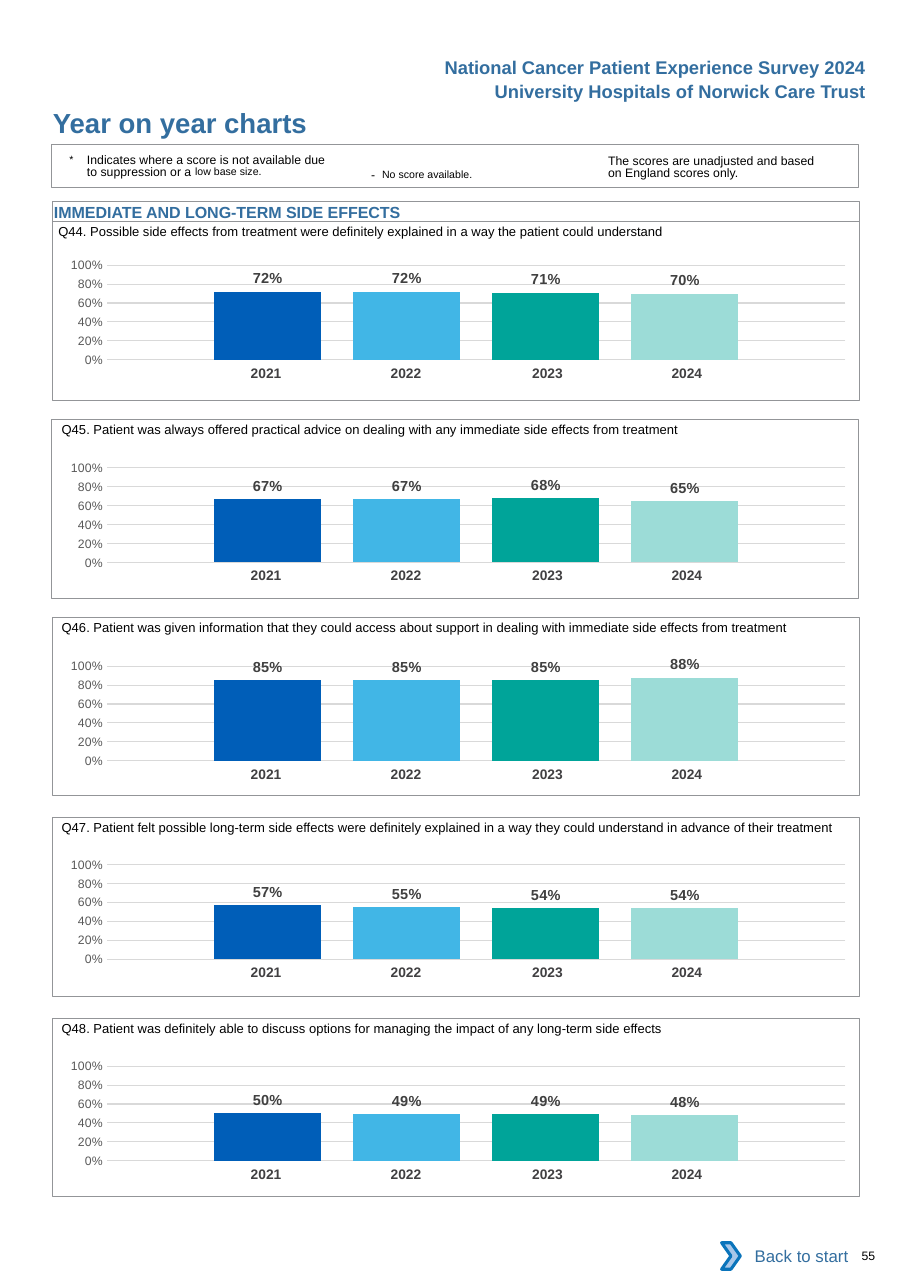
from dataclasses import dataclass

from lxml import etree
from pptx import Presentation
from pptx import util as u
from pptx.chart.data import CategoryChartData
from pptx.dml.color import RGBColor
from pptx.enum import chart as ch
from pptx.enum import shapes, text

CELL = 0.1  # inches per grid row and column
COLOURS = {
    "heading": "336E9F", "body": "000000", "frame": "939598", "year": "414042",
    "axis": "595959", "grid": "D9D9D9", "label": "404040", "white": "FFFFFF",
    "arrow": "A8C7E9", "arrow_edge": "0A74BB",
}
YEARS = {"2021": "005EB8", "2022": "41B6E6", "2023": "00A499", "2024": "9CDCD7"}
YEAR_COLUMNS = [12.7, 12.7, 13.4, 12.7]
YEAR_RIGHT_INSETS = [0, 0, 0.4, 1.2]
PLOT_LAYOUT = {"x": 0.08, "y": 0.145, "w": 0.915, "h": 0.666}

# Panel left, panel top, chart top, question left, question, scores
PANELS = [
    (4.8, 20.1, 22.2, 5.3, "Q44. Possible side effects from treatment were definitely explained "
     "in a way the patient could understand", (0.72, 0.72, 0.71, 0.70)),
    (4.7, 38.1, 40.6, 5.6, "Q45. Patient was always offered practical advice on dealing with "
     "any immediate side effects from treatment", (0.67, 0.67, 0.68, 0.65)),
    (4.8, 56.0, 58.6, 5.6, "Q46. Patient was given information that they could access about "
     "support in dealing with immediate side effects from treatment", (0.85, 0.85, 0.85, 0.88)),
    (4.8, 74.2, 76.6, 5.6, "Q47. Patient felt possible long-term side effects were definitely "
     "explained in a way they could understand in advance of their treatment",
     (0.57, 0.55, 0.54, 0.54)),
    (4.8, 92.4, 94.9, 5.6, "Q48. Patient was definitely able to discuss options for managing "
     "the impact of any long-term side effects", (0.50, 0.49, 0.49, 0.48)),
]


@dataclass
class Box:
    """A region measured in grid cells."""
    left: float
    top: float
    width: float
    height: float

    def inner(self, column, row, width, height):
        return Box(self.left + column, self.top + row, width, height)

    def lengths(self):
        return [cells(n) for n in (self.left, self.top, self.width, self.height)]


def cells(count):
    return u.Inches(count * CELL)


def colour(name):
    return RGBColor.from_string(COLOURS.get(name, name))


def set_font(font, size, name, bold=False):
    font.name, font.size, font.bold = "Arial", u.Pt(size), bold
    font.color.rgb = colour(name)


def set_insets(holder, left=0, top=0, right=0, bottom=0):
    holder.margin_left, holder.margin_top = cells(left), cells(top)
    holder.margin_right, holder.margin_bottom = cells(right), cells(bottom)


def write(shape, content, size, name="body", bold=False, align=text.PP_ALIGN.LEFT,
          anchor=text.MSO_ANCHOR.TOP, wrap=True, **insets):
    frame = shape.text_frame
    frame.word_wrap, frame.vertical_anchor = wrap, anchor
    set_insets(frame, **insets)
    paragraph = frame.paragraphs[0]
    paragraph.alignment = align
    if content:
        paragraph.add_run().text = content
    set_font(paragraph.font, size, name, bold)
    return paragraph


def add_text(slide, box, *args, **options):
    return write(slide.shapes.add_textbox(*box.lengths()), *args, **options)


def add_box(slide, box, line="frame", width=0.5, fill=None, kind=shapes.MSO_SHAPE.RECTANGLE):
    shape = slide.shapes.add_shape(kind, *box.lengths())
    shape.shadow.inherit = False
    if fill:
        shape.fill.solid()
        shape.fill.fore_color.rgb = colour(fill)
    else:
        shape.fill.background()
    if line:
        shape.line.color.rgb = colour(line)
        shape.line.width = u.Pt(width)
    else:
        shape.line.fill.background()
    return shape


def add_plain(paragraph, content, size=8):
    run = paragraph.add_run()
    run.text = content
    set_font(run.font, size, "body")
    return run


def add_raised(paragraph, content, baseline):
    """Add a 12 pt run raised by a percentage, which draws it small."""
    run = add_plain(paragraph, content, 12)
    run._r.get_or_add_rPr().set("baseline", str(baseline * 1000))


def add_header(slide, box):
    for row, line in enumerate(("National Cancer Patient Experience Survey 2024",
                                "University Hospitals of Norwick Care Trust")):
        add_text(slide, box.inner(0, row * 2.2, box.width, 3), line, 12, "heading", True,
                 text.PP_ALIGN.RIGHT, wrap=False, left=1, top=0.5, right=1, bottom=0.5)
    add_text(slide, box.inner(-34.4, 5, 45, 3), "Year on year charts", 18, "heading", True)


def add_key(slide, box):
    add_box(slide, box, width=0.75)
    suppressed = add_text(slide, box.inner(1.6, 0.7, 24, 2.8), "", 8, top=0.3)
    add_raised(suppressed, "*\t", 3)
    add_plain(suppressed, "Indicates where a score is not available due to suppression or a ")
    add_raised(suppressed, "low base size.", 7)
    suppressed.line_spacing = u.Pt(8.1)
    properties = suppressed._p.get_or_add_pPr()
    properties.set("marL", str(cells(1.6)))
    properties.set("indent", str(-cells(1.6)))

    missing = add_text(slide, box.inner(28, 1, 18.3, 2.4), "", 8,
                       left=1, top=0.5, right=1, bottom=0.5)
    add_plain(missing, "-  ")
    add_raised(missing, "No score available.", 3)

    basis = add_text(slide, box.inner(50.5, 0.7, 20.1, 2.7),
                     "The scores are unadjusted and based on England scores only.", 8, top=0.3)
    basis.line_spacing = u.Pt(8.1)


def add_years(slide, box):
    table = slide.shapes.add_table(1, len(YEARS), *box.lengths()).table
    table.first_row = table.horz_banding = False
    table.rows[0].height = cells(box.height)
    for column, (year, width) in enumerate(zip(YEARS, YEAR_COLUMNS)):
        table.columns[column].width = cells(width)
        cell = table.cell(0, column)
        cell.fill.background()
        set_insets(cell, 1, 0.5, YEAR_RIGHT_INSETS[column], 0.5)
        cell.text = year
        paragraph = cell.text_frame.paragraphs[0]
        paragraph.alignment = text.PP_ALIGN.CENTER
        set_font(paragraph.font, 9, "year", True)


def set_plot_layout(chart):
    area = chart._chartSpace.chart.plotArea
    namespace = etree.QName(area).namespace
    for old in area.findall(f"{{{namespace}}}layout"):
        area.remove(old)
    layout = etree.Element(f"{{{namespace}}}layout")
    manual = etree.SubElement(layout, f"{{{namespace}}}manualLayout")
    settings = {"layoutTarget": "inner", "xMode": "edge", "yMode": "edge", **PLOT_LAYOUT}
    for tag, value in settings.items():
        etree.SubElement(manual, f"{{{namespace}}}{tag}").set("val", str(value))
    area.insert(0, layout)


def add_score_chart(slide, box, scores):
    data = CategoryChartData(number_format="0%")
    data.categories = ["1"]
    for year, score in zip(YEARS, scores):
        data.add_series(year, [score])
    chart = slide.shapes.add_chart(ch.XL_CHART_TYPE.COLUMN_CLUSTERED, *box.lengths(), data).chart
    chart.has_legend = chart.has_title = False
    chart.font.name, chart.font.size = "Calibri", u.Pt(10)
    chart.category_axis.visible = False
    axis = chart.value_axis
    axis.minimum_scale, axis.maximum_scale, axis.major_unit = 0, 1, 0.2
    axis.major_tick_mark = axis.minor_tick_mark = ch.XL_TICK_MARK.NONE
    axis.format.line.fill.background()
    axis.major_gridlines.format.line.color.rgb = colour("grid")
    axis.major_gridlines.format.line.width = u.Pt(0.75)
    axis.tick_labels.number_format = "0%"
    axis.tick_labels.number_format_is_linked = False
    set_font(axis.tick_labels.font, 8, "axis")
    plot = chart.plots[0]
    plot.gap_width, plot.overlap, plot.vary_by_categories = 200, -30, False
    for series, fill in zip(plot.series, YEARS.values()):
        series.format.fill.solid()
        series.format.fill.fore_color.rgb = colour(fill)
        labels = series.data_labels
        labels.show_value = True
        labels.position = ch.XL_LABEL_POSITION.OUTSIDE_END
        labels.number_format, labels.number_format_is_linked = "0%", False
        set_font(labels.font, 9.5, "label", True)
    set_plot_layout(chart)


def add_panel(slide, box, chart_top, question_left, question, scores):
    chart_box = Box(3.9, chart_top, box.width, 12.9)
    add_years(slide, chart_box.inner(13.4, 10.5, sum(YEAR_COLUMNS), 2.7))
    add_score_chart(slide, chart_box, scores)
    add_text(slide, Box(question_left, box.top - 0.7, 72.4, 2.4), question, 8.5, top=0.9)
    add_box(slide, box)


def add_footer(slide, box):
    button = add_box(slide, box.inner(0.7, 0, 11.8, 4.2), line=None, fill="white")
    write(button, "Back to start", 11, "heading", align=text.PP_ALIGN.RIGHT,
          anchor=text.MSO_ANCHOR.MIDDLE, left=1, top=0.5, right=1, bottom=0.5)
    add_box(slide, box.inner(0, 0.9, 1.7, 2.4), "arrow_edge", 2, "arrow",
            shapes.MSO_SHAPE.CHEVRON)
    add_text(slide, box.inner(12.7, 1.4, 4.1, 1.3), "55", 8)


def main():
    presentation = Presentation()
    presentation.slide_width, presentation.slide_height = u.Inches(8.26), u.Inches(11.69)
    slide = presentation.slides.add_slide(presentation.slide_layouts[6])
    add_header(slide, Box(39.2, 4.6, 40.4, 5.2))
    add_key(slide, Box(4.7, 13.1, 73.2, 3.9))
    write(add_box(slide, Box(4.8, 18.3, 73.2, 1.8)), "IMMEDIATE AND LONG-TERM SIDE EFFECTS",
          10.5, "heading", True, left=0.1, top=0.1)
    for left, top, *content in PANELS:
        add_panel(slide, Box(left, top, 73.2, 16.2), *content)
    add_footer(slide, Box(65.5, 111.9, 16.8, 4.2))
    presentation.save("out.pptx")


if __name__ == "__main__":
    main()
